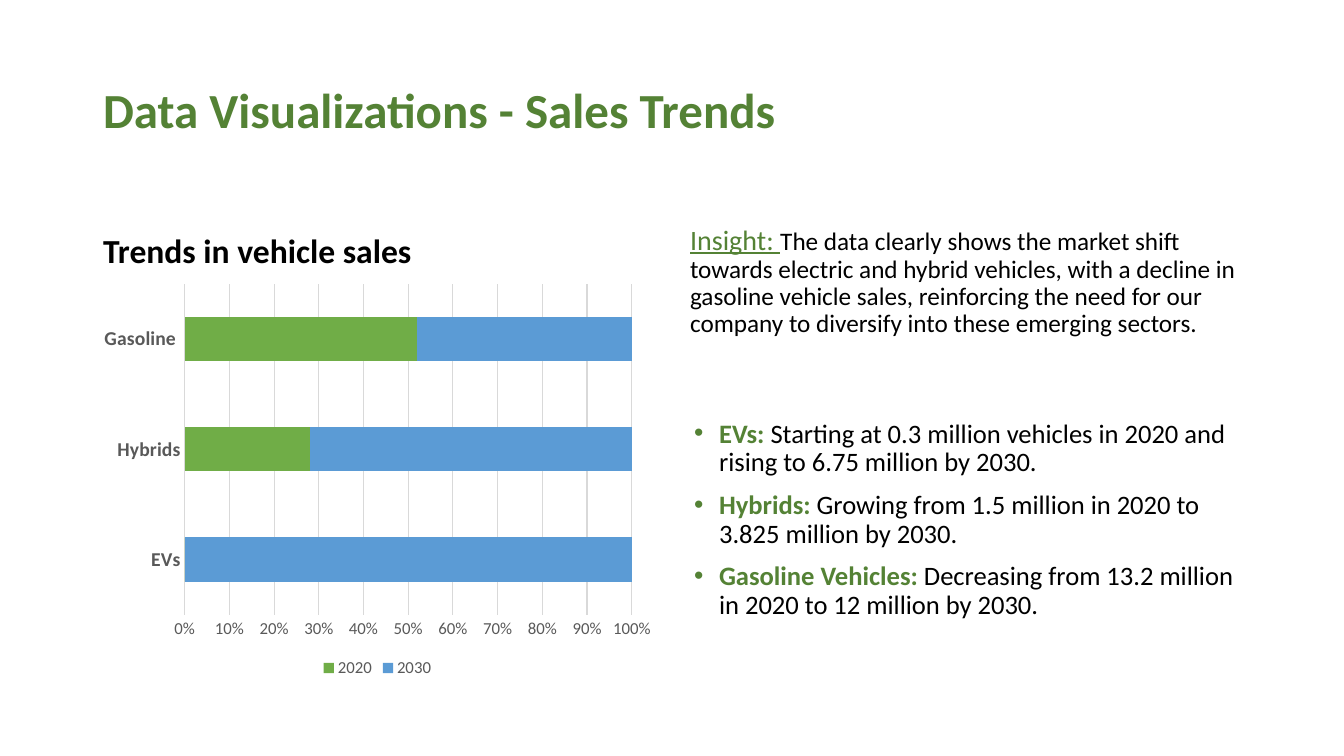
from pptx import Presentation
from pptx.chart.data import CategoryChartData
from pptx.dml.color import RGBColor
from pptx.enum.chart import XL_CHART_TYPE, XL_LEGEND_POSITION, XL_TICK_MARK
from pptx.enum.text import MSO_ANCHOR, MSO_AUTO_SIZE, PP_ALIGN
from pptx.oxml.xmlchemy import OxmlElement
from pptx.util import Emu, Pt

BAR_STACKED_100 = XL_CHART_TYPE.BAR_STACKED_100
LEGEND_BOTTOM = XL_LEGEND_POSITION.BOTTOM
NO_TICK = XL_TICK_MARK.NONE
TOP, MIDDLE, BOTTOM = MSO_ANCHOR.TOP, MSO_ANCHOR.MIDDLE, MSO_ANCHOR.BOTTOM
NO_AUTOFIT = MSO_AUTO_SIZE.NONE
LEFT = PP_ALIGN.LEFT

THEME = {
    "font": "Calibri",
    "green": RGBColor.from_string("548235"),
    "black": RGBColor.from_string("000000"),
    "label": RGBColor.from_string("595959"),
    "grid": RGBColor.from_string("D9D9D9"),
    "series": [RGBColor.from_string("70AD47"), RGBColor.from_string("5B9BD5")],
    "title": 35, "heading": 24, "lead": 20, "insight": 18, "bullet": 19,
    "category": 14, "axis": 12,
}
PX = 914400 / 100.8


def style_font(font, size, color, bold=False):
    font.name = THEME["font"]
    font.size = Pt(THEME[size])
    font.bold = bold
    font.color.rgb = THEME[color]


def fill_placeholder(index, box, anchor, paragraphs, space_before=10):
    """Each paragraph is a list of (text, size, color, bold) runs."""
    holder = slide.placeholders[index]
    holder.left, holder.top, holder.width, holder.height = [Emu(round(n * PX)) for n in box]
    frame = holder.text_frame
    frame.auto_size = NO_AUTOFIT
    frame.vertical_anchor = anchor
    for number, runs in enumerate(paragraphs):
        paragraph = frame.add_paragraph() if number else frame.paragraphs[0]
        paragraph.alignment = LEFT
        paragraph.line_spacing = 0.9
        paragraph.space_before = Pt(space_before)
        for text, size, color, bold in runs:
            run = paragraph.add_run()
            run.text = text
            style_font(run.font, size, color, bold)
    return frame


# Slide with the comparison layout
deck = Presentation()
deck.slide_width, deck.slide_height = Emu(round(1344 * PX)), Emu(round(756 * PX))
slide = deck.slides.add_slide(deck.slide_layouts[4])
chart_slot = slide.placeholders[2].element
chart_slot.getparent().remove(chart_slot)

# Title and chart heading
fill_placeholder(0, (93, 40, 1159, 146), MIDDLE,
                 [[("Data Visualizations - Sales Trends", "title", "green", True)]], 0)
fill_placeholder(1, (93, 185, 569, 91), BOTTOM,
                 [[("Trends in vehicle sales", "heading", "black", True)]])

# Sales chart
sales = CategoryChartData()
sales.categories = ["EVs", "Hybrids", "Gasoline "]
sales.add_series("2020", (0, 28, 52))
sales.add_series("2030", (100, 72, 48))
chart_box = [Emu(round(n * PX)) for n in (93, 276, 569, 406)]
chart = slide.shapes.add_chart(BAR_STACKED_100, *chart_box, sales).chart
chart.has_title = False
style_font(chart.font, "axis", "label")

plot = chart.plots[0]
plot.gap_width, plot.overlap = 150, 100
plot.vary_by_categories = False
for series, color in zip(plot.series, THEME["series"]):
    series.format.fill.solid()
    series.format.fill.fore_color.rgb = color

vehicle_axis, share_axis = chart.category_axis, chart.value_axis
for axis in (vehicle_axis, share_axis):
    axis.major_tick_mark = axis.minor_tick_mark = NO_TICK
style_font(vehicle_axis.tick_labels.font, "category", "label", True)
style_font(share_axis.tick_labels.font, "axis", "label")
share_axis.tick_labels.number_format = "0%"
share_axis.tick_labels.number_format_is_linked = False
share_axis.format.line.fill.background()
share_axis.has_major_gridlines = True
for line in (vehicle_axis.format.line, share_axis.major_gridlines.format.line):
    line.color.rgb = THEME["grid"]
    line.width = Pt(0.75)

chart.has_legend = True
chart.legend.position = LEGEND_BOTTOM
chart.legend.include_in_layout = False
style_font(chart.legend.font, "axis", "label")

# Insight
insight = fill_placeholder(3, (680, 164, 572, 179), BOTTOM, [[
    ("Insight: ", "lead", "green", False),
    ("The data clearly shows the market shift towards electric and hybrid vehicles, "
     "with a decline in gasoline vehicle sales, reinforcing the need for our company "
     "to diversify into these emerging sectors.", "insight", "black", False)]])
insight.paragraphs[0].runs[0].font.underline = True

# Bulleted figures
figures = [
    ("EVs: ", "Starting at 0.3 million vehicles in 2020 and rising to 6.75 million by 2030."),
    ("Hybrids: ", "Growing from 1.5 million in 2020 to 3.825 million by 2030."),
    ("Gasoline Vehicles: ", "Decreasing from 13.2 million in 2020 to 12 million by 2030."),
]
details = fill_placeholder(4, (684, 415, 572, 332), TOP, [
    [(vehicle, "bullet", "green", True), (trend, "bullet", "black", False)]
    for vehicle, trend in figures])
indent = round(25 * PX)
for paragraph in details.paragraphs:
    properties = paragraph._p.get_or_add_pPr()
    properties.set("marL", str(indent))
    properties.set("indent", str(-indent))
    for tag, attribute, value in (("a:buFont", "typeface", "Arial"), ("a:buChar", "char", "•")):
        bullet = OxmlElement(tag)
        bullet.set(attribute, value)
        properties.append(bullet)

deck.save("out.pptx")
